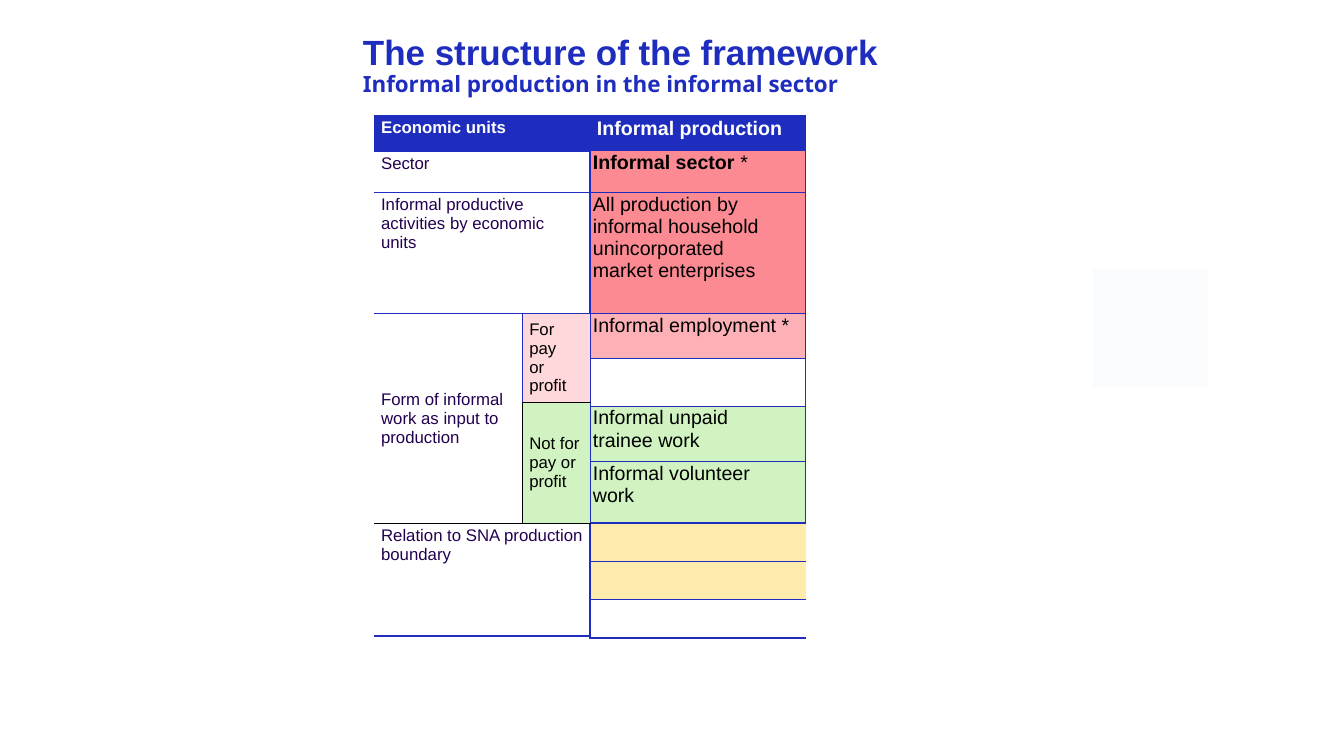
from lxml import etree
from pptx import Presentation
from pptx.dml.color import RGBColor
from pptx.enum.shapes import MSO_SHAPE
from pptx.enum.text import MSO_ANCHOR as Anchor
from pptx.oxml import parse_xml
from pptx.oxml.ns import nsdecls, qn
from pptx.util import Inches, Pt

COLORS = {
    "blue": "1E2DBE", "white": "FFFFFF", "black": "000000", "purple": "230050",
    "red": "FC8A93", "pink": "FDB1B7", "pale_pink": "FED8DB",
    "green": "D1F3C1", "yellow": "FFEBAB", "mist": "F8FCFE",
}


def style_font(paragraph, size, color, bold=False, face="Arial"):
    font = paragraph.font
    font.name, font.size, font.bold = face, Pt(size), bold
    font.color.rgb = RGBColor.from_string(COLORS[color])


def fill_cell(cell, text, size, color, fill, borders, margins, bold=False):
    cell.margin_left = cell.margin_right = Inches(margins[0])
    cell.margin_top = cell.margin_bottom = Inches(margins[1])
    paragraph = cell.text_frame.paragraphs[0]
    head, star, tail = text.partition("|")
    if star:
        paragraph.add_run().text = head
        paragraph.runs[0].font.bold = True
        paragraph.add_run().text = tail
    elif text:
        paragraph.text = text
    style_font(paragraph, size, color, bold)
    properties = cell._tc.get_or_add_tcPr()
    for side in "LRTB":
        line = borders.get(side)
        paint = (f'<a:solidFill><a:srgbClr val="{COLORS[line]}"/></a:solidFill>'
                 if line else "<a:noFill/>")
        properties.append(parse_xml(
            f'<a:ln{side} {nsdecls("a")} w="12700">{paint}</a:ln{side}>'))
    if fill:
        cell.fill.solid()
        cell.fill.fore_color.rgb = RGBColor.from_string(COLORS[fill])
    else:
        cell.fill.background()


prs = Presentation()
prs.slide_width, prs.slide_height = Inches(13.33), Inches(7.5)
slide = prs.slides.add_slide(prs.slide_layouts[6])

heading = slide.shapes.add_textbox(Inches(3.6), Inches(0.35), Inches(9.5), Inches(0.79)).text_frame
heading.word_wrap = True
heading.margin_left = heading.margin_right = heading.margin_top = heading.margin_bottom = 0
title = heading.paragraphs[0]
title.line_spacing = 0.9
title.add_run().text = "The structure of the framework"
title.add_line_break()
subtitle = title.add_run()
subtitle.text = "Informal production in the informal sector"
style_font(title, 25, "blue", True)
subtitle.font.name, subtitle.font.size = "Noto Sans", Pt(16)

square = slide.shapes.add_shape(MSO_SHAPE.RECTANGLE, Inches(10.85), Inches(2.68), Inches(1.12), Inches(1.15))
square.shadow.inherit = False
square.fill.solid()
square.fill.fore_color.rgb = square.line.color.rgb = RGBColor.from_string(COLORS["mist"])
square.line.width = Pt(1)
tint = square._element.spPr.find(qn("a:solidFill"))[0]
etree.SubElement(tint, qn("a:alpha")).set("val", "70000")

production_rows = [
    (0.35, "Informal production", "blue"),
    (0.42, "Informal sector\u00a0|*", "red"),
    (1.2, "All production by\vinformal household\vunincorporated\vmarket enterprises", "red"),
    (0.45, "Informal employment\u00a0*", "pink"),
    (0.47, "", None),
    (0.55, "Informal unpaid\vtrainee work", "green"),
    (0.61, "Informal volunteer\vwork", "green"),
    (0.38, "", "yellow"),
    (0.38, "", "yellow"),
    (0.38, "", None),
]
production = slide.shapes.add_table(len(production_rows), 1, Inches(5.85), Inches(1.14),
                                    Inches(2.14), Inches(5.19)).table
production.first_row = production.horz_banding = False
for index, (height, text, fill) in enumerate(production_rows):
    production.rows[index].height = Inches(height)
    is_header = index == 0
    sides = "B" if is_header else "LRTB" if index < 7 else "LTB"
    fill_cell(production.cell(index, 0), text, 14, "white" if is_header else "black", fill,
              dict.fromkeys(sides, "blue"), (0.07, 0.03) if is_header else (0.03, 0.01), is_header)

unit_heights = [0.36, 0.41, 1.2, 0.88, 1.2, 1.12]
units = slide.shapes.add_table(len(unit_heights), 2, Inches(3.71), Inches(1.14),
                               Inches(2.15), Inches(5.17)).table
units.first_row = units.horz_banding = False
for column, width in enumerate([1.47, 0.68]):
    units.columns[column].width = Inches(width)
for row, height in enumerate(unit_heights):
    units.rows[row].height = Inches(height)
for row in (0, 1, 2, 5):
    units.cell(row, 0).merge(units.cell(row, 1))
units.cell(3, 0).merge(units.cell(4, 0))

boxed = dict.fromkeys("RTB", "blue")
form = {"T": "blue", "R": "blue", "B": "black"}
paid = {"L": "blue", "R": "blue", "T": "blue", "B": "black"}
unpaid = {"L": "black", "R": "blue", "T": "black", "B": "black"}
relation = {"R": "blue", "T": "black", "B": "blue"}
unit_cells = [
    (0, 0, "Economic units", "white", "blue", {"B": "blue"}),
    (0, 1, "", "white", "blue", {"B": "blue"}),
    (1, 0, "Sector", "purple", None, boxed),
    (1, 1, "", "purple", None, boxed),
    (2, 0, "Informal productive\vactivities by economic units", "purple", None, boxed),
    (2, 1, "", "purple", None, boxed),
    (3, 0, "Form of informal work as input to production", "purple", None, form),
    (3, 1, "For pay\vor profit", "black", "pale_pink", paid),
    (4, 0, "", "purple", None, {"R": "black", "B": "black"}),
    (4, 1, "Not for pay or profit", "black", "green", unpaid),
    (5, 0, "Relation to SNA production boundary", "purple", None, relation),
    (5, 1, "", "purple", None, relation),
]
for row, column, text, color, fill, borders in unit_cells:
    cell = units.cell(row, column)
    fill_cell(cell, text, 12, color, fill, borders, (0.07, 0.03), row == 0)
    if row in (3, 4):
        cell.vertical_anchor = Anchor.MIDDLE

prs.save("out.pptx")
